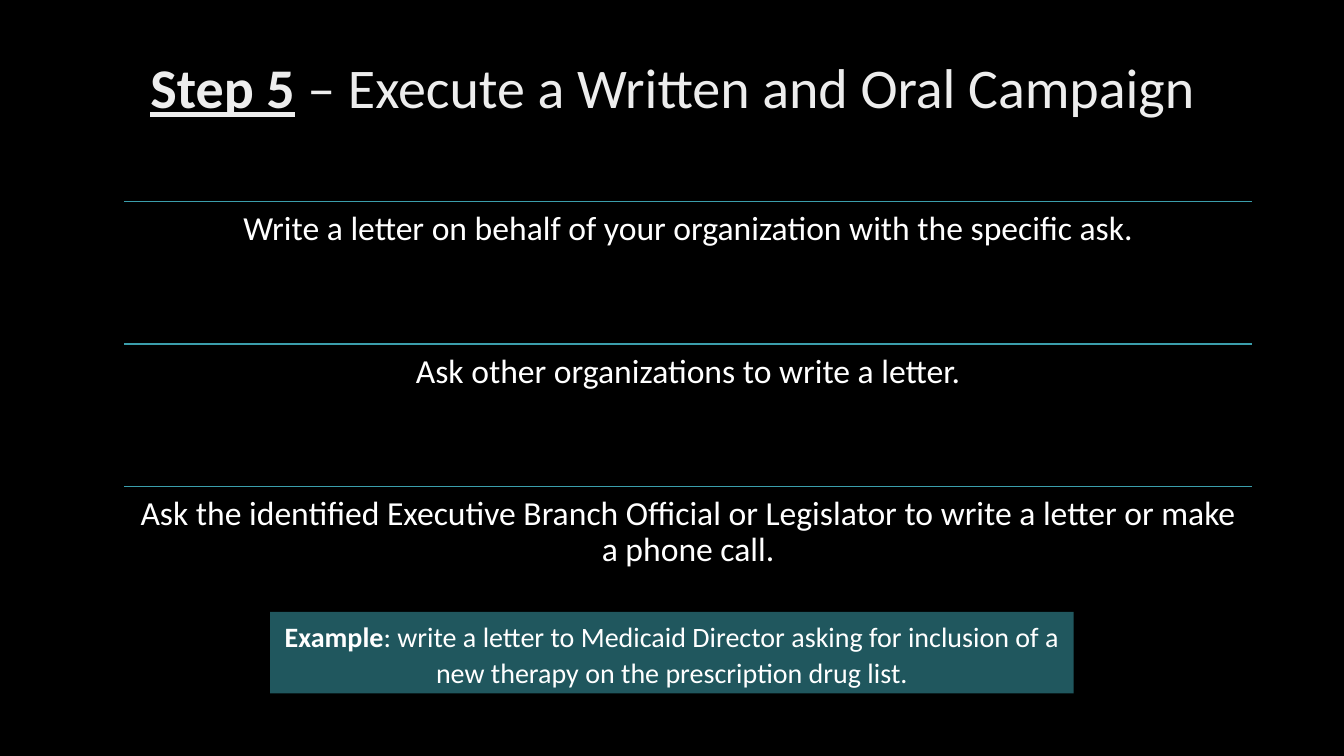
import copy
import dataclasses

import lxml.etree
import pptx
import pptx.dml.color
import pptx.enum.shapes
import pptx.enum.text
import pptx.oxml.ns
import pptx.util

Inches = pptx.util.Inches
Pt = pptx.util.Pt
qn = pptx.oxml.ns.qn
Anchor = pptx.enum.text.MSO_ANCHOR


@dataclasses.dataclass(frozen=True)
class Theme:
    """Colours, font and type sizes of the slide."""
    back: str = "000000"
    text: str = "FFFFFF"
    rule: str = "3B9EAC"
    note: str = "41AEBD"
    shade: tuple = ((0, "BFBFBF"), (0.28, "EDEDED"), (1, "FFFFFF"))
    font: str = "Calibri"
    head: int = 40
    body: int = 24
    small: int = 20


THEME = Theme()
STEPS = [
    "Write a letter on behalf of your organization with the specific ask.",
    "Ask other organizations to write a letter.",
    "Ask the identified Executive Branch Official or Legislator "
    "to write a letter or make a phone call.",
]


def color(code):
    """Turn a hex code into a colour."""
    return pptx.dml.color.RGBColor.from_string(code)


def apply(item, values):
    """Set each attribute named in a dict."""
    for name, value in values.items():
        setattr(item, name, value)


def write(shape, runs, size, frame, para):
    """Fill a shape with one centred paragraph of styled runs."""
    apply(shape.text_frame, {"word_wrap": True, **frame})
    line = shape.text_frame.paragraphs[0]
    apply(line, {"alignment": pptx.enum.text.PP_ALIGN.CENTER, **para})
    for text, style in runs:
        run = line.add_run()
        run.text = text
        apply(run.font, {"name": THEME.font, "size": Pt(size), **style})
        run.font.color.rgb = color(THEME.text)
    return line.runs


def blend(run):
    """Give a run the heading gradient."""
    fill = run.font.fill
    fill.gradient()
    stops = run._r.find(".//" + qn("a:gsLst"))
    stops.append(copy.deepcopy(stops[0]))
    for stop, (place, code) in zip(fill.gradient_stops, THEME.shade):
        stop.position = place
        stop.color.rgb = color(code)
    fill.gradient_angle = 280


def title(slide, left, top, width, height):
    """Place the heading, raised above the middle of its box."""
    box = slide.shapes.add_textbox(*map(Inches, (left, top, width, height)))
    runs = write(
        box,
        [("Step 5", {"bold": True, "underline": True}),
         (" – Execute a Written and Oral Campaign", {})],
        THEME.head,
        {"vertical_anchor": Anchor.MIDDLE, "margin_bottom": Inches(0.78)},
        {"line_spacing": 1.07, "space_after": Pt(8)},
    )
    for run in runs:
        blend(run)


def steps(slide, left, top, width, height):
    """Stack the steps in equal rows, each under a rule."""
    row = height / len(STEPS)
    sides = ("left", "top", "right", "bottom")
    frame = {f"margin_{side}": Inches(0.1) for side in sides}
    for index, text in enumerate(STEPS):
        y = top + index * row
        rule = slide.shapes.add_connector(
            pptx.enum.shapes.MSO_CONNECTOR.STRAIGHT,
            *map(Inches, (left, y, left + width, y)))
        rule.line.color.rgb = color(THEME.rule)
        rule.line.width = Pt(1)
        lxml.etree.SubElement(rule._element.spPr, qn("a:effectLst"))
        box = slide.shapes.add_textbox(*map(Inches, (left, y, width, row)))
        write(box, [(text, {})], THEME.body, frame, {"line_spacing": 0.9})


def note(slide, left, top, width, height):
    """Place the example in a half-clear panel."""
    panel = slide.shapes.add_shape(
        pptx.enum.shapes.MSO_SHAPE.RECTANGLE,
        *map(Inches, (left, top, width, height)))
    panel.shadow.inherit = False
    panel.fill.solid()
    panel.fill.fore_color.rgb = color(THEME.note)
    tint = panel._element.spPr.find(".//" + qn("a:srgbClr"))
    lxml.etree.SubElement(tint, qn("a:alpha"), val="50000")
    panel.line.fill.background()
    write(
        panel,
        [("Example", {"bold": True}),
         (": write a letter to Medicaid Director asking for inclusion "
          "of a new therapy on the prescription drug list.", {})],
        THEME.small,
        {"vertical_anchor": Anchor.TOP},
        {"line_spacing": 1.07, "space_after": Pt(8)},
    )


def main():
    """Build and save the slide."""
    deck = pptx.Presentation()
    apply(deck, {"slide_width": Inches(13.33), "slide_height": Inches(7.5)})
    slide = deck.slides.add_slide(deck.slide_layouts[6])
    slide.background.fill.solid()
    slide.background.fill.fore_color.rgb = color(THEME.back)
    title(slide, 0.92, 0.4, 11.5, 1.6)
    steps(slide, 1.23, 2, 11.19, 4.24)
    note(slide, 2.68, 6.07, 7.97, 0.81)
    deck.save("out.pptx")


if __name__ == "__main__":
    main()
